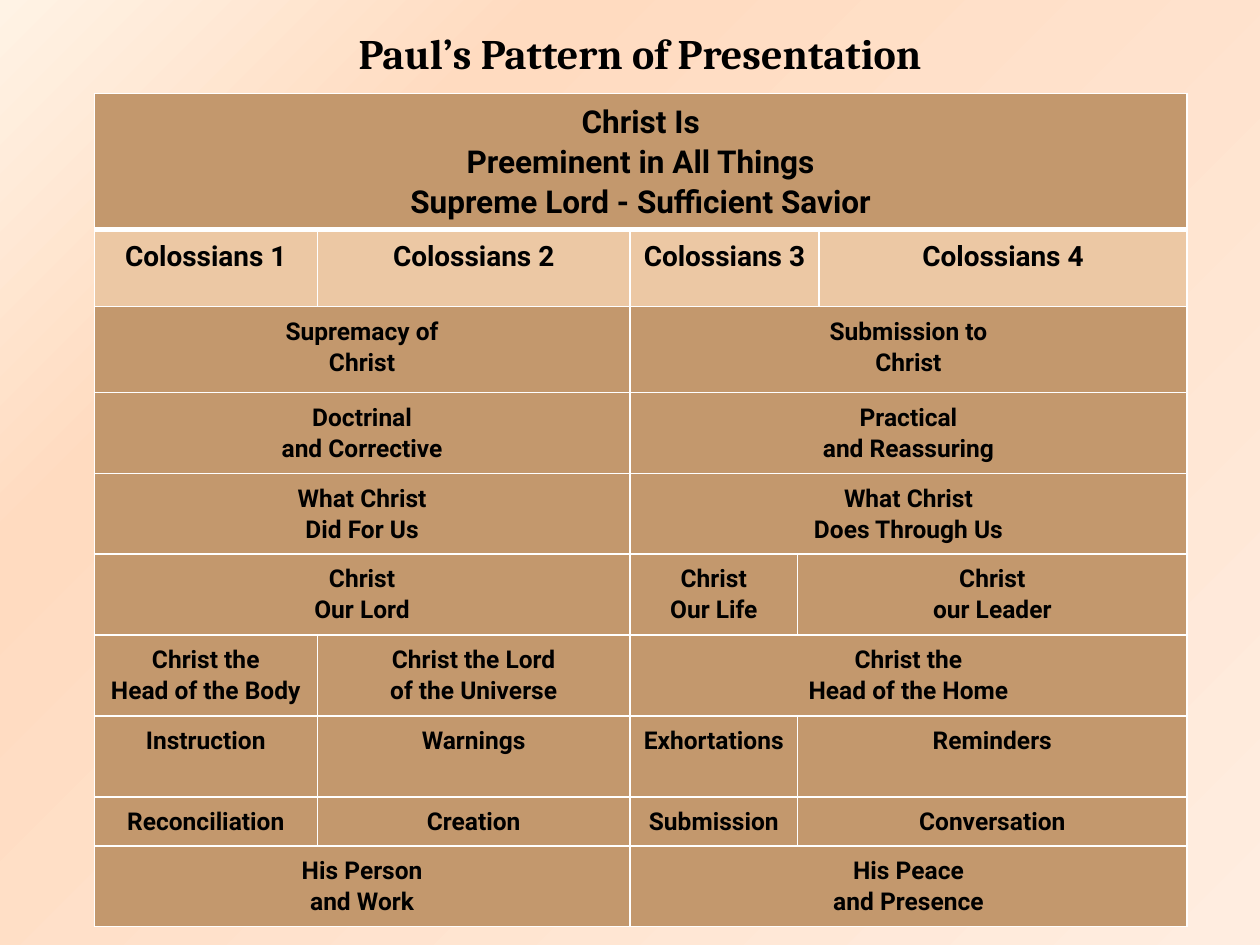
from copy import deepcopy

from lxml import etree
from pptx import Presentation
from pptx import util as u
from pptx.dml import color
from pptx.enum import text
from pptx.oxml import ns

COLORS = {"ink": "000000", "grid": "FFFFFF", "body": "C3986D", "chapter": "ECC8A4"}
BACKDROP = [(0, "FFF3E5", 50), (25, "FFDBC0", 100), (100, "FFEDE0", 100)]
COLUMNS = [4.5, 6.3, 3.38, 0.43, 7.42]
TITLE = "Paul’s Pattern of Presentation"
ROWS = [
    (2.74, [("Christ Is\nPreeminent in All Things\nSupreme Lord - Sufficient Savior", 5)]),
    (1.55, [("Colossians 1", 1), ("Colossians 2", 1), ("Colossians 3", 2), ("Colossians 4", 1)]),
    (1.73, [("Supremacy of\nChrist", 2), ("Submission to\nChrist", 3)]),
    (1.63, [("Doctrinal\nand Corrective", 2), ("Practical\nand Reassuring", 3)]),
    (1.63, [("What Christ\nDid For Us", 2), ("What Christ\nDoes Through Us", 3)]),
    (1.63, [("Christ\nOur Lord", 2), ("Christ\nOur Life", 1), ("Christ\nour Leader", 2)]),
    (1.63, [("Christ the\nHead of the Body", 1), ("Christ the Lord\nof the Universe", 1),
            ("Christ the\nHead of the Home", 3)]),
    (1.63, [("Instruction", 1), ("Warnings", 1), ("Exhortations", 1), ("Reminders", 2)]),
    (0.99, [("Reconciliation", 1), ("Creation", 1), ("Submission", 1), ("Conversation", 2)]),
    (1.63, [("His Person\nand Work", 2), ("His Peace\nand Presence", 3)]),
]
HEADLINE, CHAPTERS = 0, 1
SIZES = {HEADLINE: 18, CHAPTERS: 16}
MARGINS = {f"margin_{side}": u.Cm(0.18) for side in ("left", "right", "top", "bottom")}


def apply(target, values):
    for name, value in values.items():
        setattr(target, name, value)


def sub(parent, tag, **attributes):
    return etree.SubElement(parent, ns.qn(tag), {k: str(v) for k, v in attributes.items()})


def paint_backdrop(slide):
    fill = slide.background.fill
    fill.gradient()
    fill.gradient_angle = 315
    stops = fill.gradient_stops[0]._gs.getparent()
    for stop in list(stops):
        stops.remove(stop)
    for position, tone, opacity in BACKDROP:
        stop = sub(stops, "a:gs", pos=position * 1000)
        rgb = sub(stop, "a:srgbClr", val=tone)
        if opacity < 100:
            sub(rgb, "a:alpha", val=opacity * 1000)


def write(frame, words, font, size, **spacing):
    paragraph = frame.paragraphs[0]
    paragraph.text = words
    apply(paragraph, {"alignment": text.PP_ALIGN.CENTER, **spacing})
    for run in paragraph.runs:
        apply(run.font, {"name": font, "size": u.Pt(size), "bold": True})
        run.font.color.rgb = color.RGBColor.from_string(COLORS["ink"])
    for line_break in paragraph._p.findall(ns.qn("a:br")):
        line_break.append(deepcopy(paragraph.runs[0]._r.rPr))


def rule_cell(cell, row):
    widths = {"L": 1, "R": 1, "T": 3 if row == CHAPTERS else 1, "B": 3 if row == HEADLINE else 1}
    properties = cell._tc.get_or_add_tcPr()
    for side, width in widths.items():
        line = sub(properties, f"a:ln{side}", w=u.Pt(width))
        sub(sub(line, "a:solidFill"), "a:srgbClr", val=COLORS["grid"])


def add_title(slide):
    box = slide.shapes.add_textbox(u.Cm(6.45), u.Cm(0.43), u.Cm(12.9), u.Cm(1.27))
    box.text_frame.word_wrap = True
    write(box.text_frame, TITLE, "Cambria", 24)


def add_outline(slide):
    heights = [height for height, _ in ROWS]
    outline = slide.shapes.add_table(
        len(ROWS), len(COLUMNS), u.Cm(1.9), u.Cm(1.88),
        u.Cm(sum(COLUMNS)), u.Cm(sum(heights))).table
    for column, width in zip(outline.columns, COLUMNS):
        column.width = u.Cm(width)
    for row, (height, topics) in enumerate(ROWS):
        outline.rows[row].height = u.Cm(height)
        tone = COLORS["chapter" if row == CHAPTERS else "body"]
        for cell in outline.rows[row].cells:
            apply(cell, MARGINS)
            rule_cell(cell, row)
            cell.fill.solid()
            cell.fill.fore_color.rgb = color.RGBColor.from_string(tone)
        gap = u.Pt(6 if row == HEADLINE else 0)
        start = 0
        for topic, span in topics:
            cell = outline.cell(row, start)
            if span > 1:
                cell.merge(outline.cell(row, start + span - 1))
            write(cell.text_frame, topic, "Roboto", SIZES.get(row, 14),
                  line_spacing=1.07, space_before=gap, space_after=gap)
            start += span


def main():
    deck = Presentation()
    apply(deck, {"slide_width": u.Cm(25.4), "slide_height": u.Cm(19.05)})
    slide = deck.slides.add_slide(deck.slide_layouts[6])
    paint_backdrop(slide)
    add_outline(slide)
    add_title(slide)
    deck.save("out.pptx")


if __name__ == "__main__":
    main()
